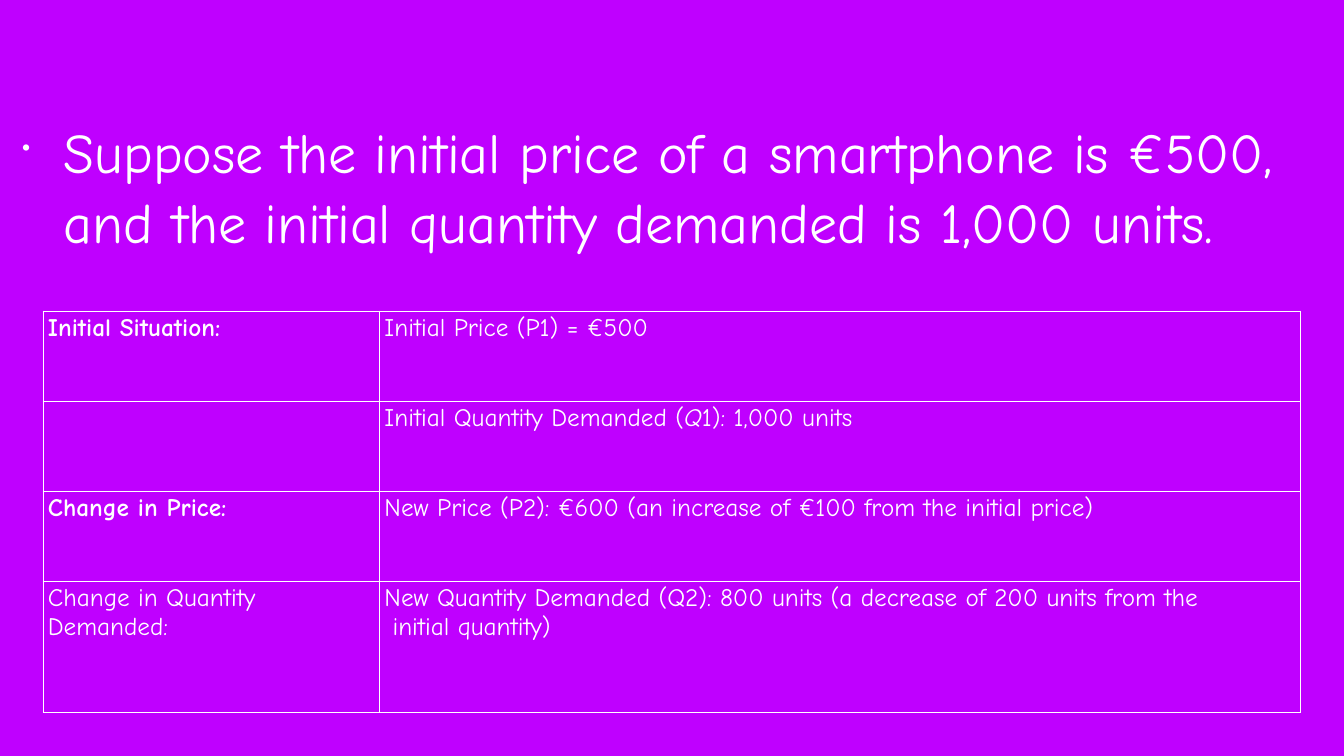
"""Build the smartphone price and quantity example slide."""
import pptx
import pptx.dml.color
import pptx.enum.text
import pptx.oxml
import pptx.oxml.ns
import pptx.util
from pptx.util import Inches

PURPLE = pptx.dml.color.RGBColor(0xBF, 0x00, 0xFF)
WHITE = pptx.dml.color.RGBColor(0xFF, 0xFF, 0xFF)
NS = pptx.oxml.ns.nsdecls("a")


def style_run(run, size, bold=False, italic=False):
    run.font.name = "Comic Neue"
    run.font.size = pptx.util.Pt(size)
    run.font.bold = bold
    run.font.italic = italic
    run.font.color.rgb = WHITE


def draw_borders(cell):
    properties = cell._tc.get_or_add_tcPr()
    for position, side in enumerate(("lnL", "lnR", "lnT", "lnB")):
        properties.insert(position, pptx.oxml.parse_xml(
            f'<a:{side} {NS} w="12700"><a:solidFill><a:srgbClr val="{WHITE}"/>'
            f'</a:solidFill></a:{side}>'))


presentation = pptx.Presentation()
presentation.slide_width = Inches(26.67)
presentation.slide_height = Inches(15)
slide = presentation.slides.add_slide(presentation.slide_layouts[6])
slide.background.fill.solid()
slide.background.fill.fore_color.rgb = PURPLE

premise = slide.shapes.add_textbox(
    Inches(0.38), Inches(2.2), Inches(25.43), Inches(2.8)).text_frame
premise.word_wrap = True
premise.vertical_anchor = pptx.enum.text.MSO_ANCHOR.TOP
premise.margin_left = premise.margin_right = Inches(0.06)
premise.margin_top = premise.margin_bottom = Inches(0.06)
premise.text = ("Suppose the initial price of a smartphone is €500, "
                "and the initial quantity demanded is 1,000 units.")
statement = premise.paragraphs[0]
statement.line_spacing = 1.05
bullet_properties = statement._p.get_or_add_pPr()
bullet_properties.set("marL", str(Inches(0.83)))
bullet_properties.set("indent", str(-Inches(0.83)))
for bullet_part in ('buSzPct {} val="43000"', 'buChar {} char="•"'):
    bullet_properties.append(pptx.oxml.parse_xml(f"<a:{bullet_part.format(NS)}/>"))
style_run(statement.runs[0], 80)

SITUATIONS = [
    ("Initial Situation:", "Initial Price (P1) = €500"),
    ("", "Initial Quantity Demanded (Q1): 1,000 units"),
    ("Change in Price:",
     "New Price (P2): €600 (an increase of €100 from the initial price)"),
    ("Change in Quantity Demanded:",
     "New Quantity Demanded (Q2): 800 units (a decrease of 200 units from the\n"
     "initial quantity)"),
]
BOLD_LABELS = ("Initial Situation:", "Change in Price:")

situation_table = slide.shapes.add_table(
    4, 2, Inches(0.85), Inches(6.17), Inches(24.96), Inches(7.96)).table
situation_table.first_row = False
situation_table.horz_banding = False
for column, width in zip(situation_table.columns, (6.68, 18.28)):
    column.width = Inches(width)
for row, height, texts in zip(situation_table.rows, (1.79, 1.79, 1.79, 2.59), SITUATIONS):
    row.height = Inches(height)
    for cell, text in zip(row.cells, texts):
        cell.fill.background()
        draw_borders(cell)
        cell.text_frame.text = text
        for paragraph in cell.text_frame.paragraphs:
            for run in paragraph.runs:
                style_run(run, 36, bold=text in BOLD_LABELS)

quantity = situation_table.cell(1, 1).text_frame.paragraphs[0]
before, after = quantity.text.split("Q1")
quantity.text = before
style_run(quantity.runs[0], 36)
for part, italic in (("Q", True), ("1" + after, False)):
    run = quantity.add_run()
    run.text = part
    style_run(run, 36, italic=italic)

continuation = situation_table.cell(3, 1).text_frame.paragraphs[1]
continuation._p.get_or_add_pPr().set("marL", str(Inches(0.16)))

presentation.save("out.pptx")
